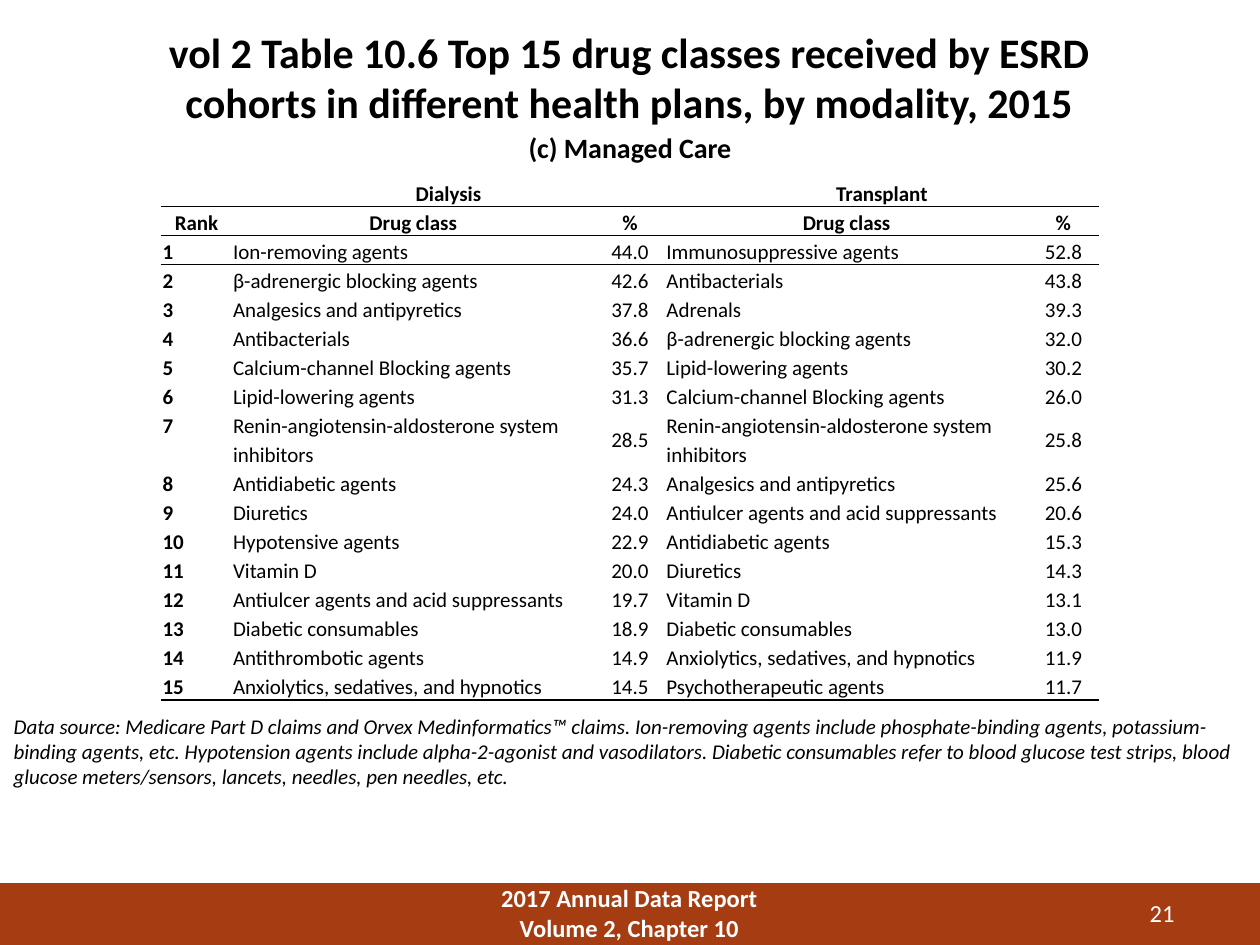
from typing import NamedTuple

from lxml.etree import SubElement
from pptx import Presentation
from pptx.dml.color import RGBColor
from pptx.enum.shapes import MSO_SHAPE as Shape
from pptx.enum.text import MSO_ANCHOR as Anchor, PP_ALIGN as Align
from pptx.oxml import parse_xml
from pptx.oxml.ns import nsdecls, qn
from pptx.util import Inches, Pt

BLACK = RGBColor(0, 0, 0)
WHITE = RGBColor(255, 255, 255)
RUST = RGBColor(0xA6, 0x3C, 0x12)
FONT = "Calibri"
NO_STYLE = "{2D5ABB26-0587-4C30-8999-92F81FD0307C}"
WIDTHS = [0.56, 2.88, 0.56, 2.88, 0.56]
ROW = 0.23


class Label(NamedTuple):
    box: tuple[float, float, float, float]
    lines: list[str]
    size: int
    color: RGBColor = BLACK
    bold: bool = False
    italic: bool = False
    align: Align = Align.CENTER
    before: int = 0


class Drug(NamedTuple):
    name: str
    share: str


RENIN = "Renin-angiotensin-aldosterone system inhibitors"
BETA = "β-adrenergic blocking agents"
CALCIUM = "Calcium-channel Blocking agents"
ULCER = "Antiulcer agents and acid suppressants"
CALM = "Anxiolytics, sedatives, and hypnotics"

DIALYSIS = [
    Drug("Ion-removing agents", "44.0"),
    Drug(BETA, "42.6"),
    Drug("Analgesics and antipyretics", "37.8"),
    Drug("Antibacterials", "36.6"),
    Drug(CALCIUM, "35.7"),
    Drug("Lipid-lowering agents", "31.3"),
    Drug(RENIN, "28.5"),
    Drug("Antidiabetic agents", "24.3"),
    Drug("Diuretics", "24.0"),
    Drug("Hypotensive agents", "22.9"),
    Drug("Vitamin D", "20.0"),
    Drug(ULCER, "19.7"),
    Drug("Diabetic consumables", "18.9"),
    Drug("Antithrombotic agents", "14.9"),
    Drug(CALM, "14.5"),
]
GRAFT = [
    Drug("Immunosuppressive agents", "52.8"),
    Drug("Antibacterials", "43.8"),
    Drug("Adrenals", "39.3"),
    Drug(BETA, "32.0"),
    Drug("Lipid-lowering agents", "30.2"),
    Drug(CALCIUM, "26.0"),
    Drug(RENIN, "25.8"),
    Drug("Analgesics and antipyretics", "25.6"),
    Drug(ULCER, "20.6"),
    Drug("Antidiabetic agents", "15.3"),
    Drug("Diuretics", "14.3"),
    Drug("Vitamin D", "13.1"),
    Drug("Diabetic consumables", "13.0"),
    Drug(CALM, "11.9"),
    Drug("Psychotherapeutic agents", "11.7"),
]

TITLE = Label(
    (0.71, 0.14, 8.57, 0.87),
    ["vol 2 Table 10.6 Top 15 drug classes received by ESRD "
     "cohorts in different health plans, by modality, 2015"],
    24, bold=True)
LABELS = [
    Label((3.58, 6.96, 2.83, 0.33),
          ["2017 Annual Data Report", "Volume 2, Chapter 10"],
          14, WHITE, bold=True),
    Label((8.42, 7.08, 1, 0.3), ["21"], 14, WHITE, align=Align.RIGHT),
    Label((0.01, 5.61, 9.99, 0.71),
          ["Data source: Medicare Part D claims and Orvex Medinformatics™ "
           "claims. Ion-removing agents include phosphate-binding agents, "
           "potassium-binding agents, etc. Hypotension agents include "
           "alpha-2-agonist and vasodilators. Diabetic consumables refer to "
           "blood glucose test strips, blood glucose meters/sensors, "
           "lancets, needles, pen needles, etc."],
          12, italic=True, align=Align.LEFT),
    Label((3.98, 0.99, 2.04, 0.37), ["(c) Managed Care"], 16, bold=True),
]


def style(para, size: int, color: RGBColor, bold: bool, italic: bool,
          align: Align) -> None:
    para.alignment = align
    font = para.font
    font.name, font.size = FONT, Pt(size)
    font.bold, font.italic = bold, italic
    font.color.rgb = color


def fill_text(shape, label: Label) -> None:
    frame = shape.text_frame
    frame.word_wrap = True
    frame.text = "\n".join(label.lines)
    for para in frame.paragraphs:
        style(para, label.size, label.color, label.bold, label.italic,
              label.align)


def add_label(slide, label: Label) -> None:
    box = slide.shapes.add_textbox(*map(Inches, label.box))
    fill_text(box, label)
    box.text_frame.vertical_anchor = Anchor.TOP


def add_title(slide, label: Label) -> None:
    title = slide.shapes.title
    title.left, title.top, title.width, title.height = map(Inches, label.box)
    fill_text(title, label)
    title.text_frame.vertical_anchor = Anchor.BOTTOM
    title.text_frame.margin_top = title.text_frame.margin_bottom = 0


def add_band(slide) -> None:
    band = slide.shapes.add_shape(
        Shape.RECTANGLE, 0, Inches(7.01), Inches(10), Inches(0.49))
    band.shadow.inherit = False
    band.fill.solid()
    band.fill.fore_color.rgb = RUST
    band.line.fill.background()


def add_rule(cell, side: str) -> None:
    cell._tc.get_or_add_tcPr().append(parse_xml(
        f'<a:{side} {nsdecls("a")} w="12700"><a:solidFill>'
        f'<a:srgbClr val="{BLACK}"/></a:solidFill></a:{side}>'))


def fill_cell(cell, text: str, bold: bool, align: Align) -> None:
    cell.margin_left = cell.margin_right = Inches(0.01)
    cell.margin_top = cell.margin_bottom = 0
    cell.text = text
    para = cell.text_frame.paragraphs[0]
    para.line_spacing = 1.15
    style(para, 12, BLACK, bold, False, align)
    if not text:  # keep empty cells as low as the others
        SubElement(para._p, qn("a:endParaRPr"), sz="1200")


def add_grid(slide) -> None:
    rows = [["", "Dialysis", "", "Transplant", ""],
            ["Rank"] + ["Drug class", "%"] * 2]
    rows += [[str(rank), *left, *right] for rank, (left, right)
             in enumerate(zip(DIALYSIS, GRAFT), 1)]
    ruled = (0, 1, len(rows) - 1)  # rows with a line below
    frame = slide.shapes.add_table(
        len(rows), len(WIDTHS), Inches(1.28), Inches(1.41),
        Inches(sum(WIDTHS)), Inches(ROW * (len(rows) + 1)))
    table = frame.table
    table.first_row = table.horz_banding = False
    for tag in frame._element.iter(qn("a:tableStyleId")):
        tag.text = NO_STYLE
    for col, width in zip(table.columns, WIDTHS):
        col.width = Inches(width)

    for r, row in enumerate(rows):
        # The long name takes two lines
        table.rows[r].height = Inches(ROW * (2 if RENIN in row else 1))
        for c, text in enumerate(row):
            cell = table.cell(r, c)
            head = r < 2
            left = not head and c in (0, 1, 3)
            fill_cell(cell, text, head or c == 0,
                      Align.LEFT if left else Align.CENTER)
            top = not head and c == 0
            cell.vertical_anchor = Anchor.TOP if top else Anchor.MIDDLE
            if r - 1 in ruled:
                add_rule(cell, "lnT")
            if r in ruled:
                add_rule(cell, "lnB")
            cell.fill.background()
    for c in (1, 3):
        table.cell(0, c).merge(table.cell(0, c + 1))


def main() -> None:
    deck = Presentation()
    deck.slide_width, deck.slide_height = Inches(10), Inches(7.5)
    slide = deck.slides.add_slide(deck.slide_layouts[5])
    add_band(slide)
    add_title(slide, TITLE)
    for label in LABELS:
        add_label(slide, label)
    add_grid(slide)
    deck.save("out.pptx")


if __name__ == "__main__":
    main()
